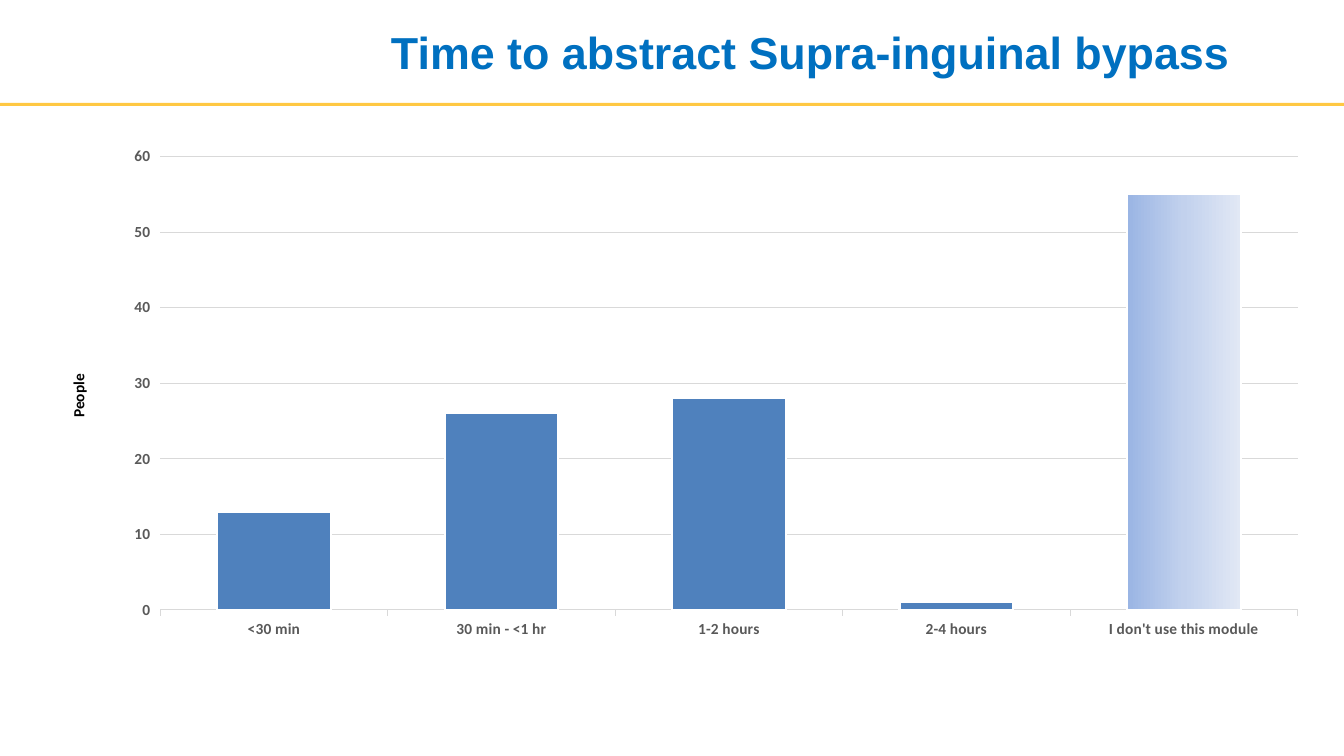
from copy import deepcopy
from dataclasses import dataclass

from pptx import Presentation
from pptx.chart.data import CategoryChartData
from pptx.dml.color import RGBColor
from pptx.enum.chart import XL_CHART_TYPE as ChartType, XL_TICK_MARK as Tick
from pptx.enum.shapes import MSO_SHAPE as Shape
from pptx.enum.text import MSO_ANCHOR as Anchor, PP_ALIGN as Align
from pptx.oxml import parse_xml
from pptx.oxml.ns import nsdecls
from pptx.util import Pt

PX = 9144
GREY, GRID, WHITE = "595959", "D9D9D9", "FFFFFF"
PEOPLE_BY_TIME = {
    "<30 min": 13,
    "30 min - <1 hr": 26,
    "1-2 hours": 28,
    "2-4 hours": 1,
    "I don't use this module": 55,
}
UNUSED_GRADIENT = [(0, "9AB5E4"), (0.5, "C2D1ED"), (1, "E1E8F5")]
PLOT_LAYOUT = {"x": 0.04, "y": 0.04, "w": 0.94, "h": 0.88}


@dataclass
class Label:
    """A line of bold text with its box in px."""
    text: str
    box: tuple[int, int, int, int]
    font: dict
    color: str
    anchor: Anchor = Anchor.TOP
    rotation: int = 0


LABELS = [
    Label("Time to abstract Supra-inguinal bypass", (378, 0, 867, 102),
          {"name": "Arial", "size": Pt(32), "bold": True}, "0070C0", Anchor.MIDDLE),
    Label("People", (-91, 241, 338, 29),
          {"name": "Calibri", "size": Pt(11), "bold": True}, "000000", rotation=270),
]


def rgb(color: str) -> RGBColor:
    """Turn a hex string into a colour."""
    return RGBColor.from_string(color)


def emu(box: tuple[int, ...]) -> list[int]:
    """Scale px lengths to EMU."""
    return [length * PX for length in box]


def style_font(font, values: dict, color: str) -> None:
    """Apply format values and a colour to a font."""
    for name, value in values.items():
        setattr(font, name, value)
    font.color.rgb = rgb(color)


def style_line(line, color: str, width: float) -> None:
    """Give a line a solid colour and a width in points."""
    line.color.rgb = rgb(color)
    line.width = Pt(width)


def add_rule(slide) -> None:
    """Draw the yellow band under the title."""
    s = slide.shapes.add_shape(Shape.RECTANGLE, *emu((0, 102, 1333, 3)))
    s.shadow.inherit = False
    s.fill.solid()
    s.fill.fore_color.rgb = rgb("FFC843")
    s.line.fill.background()


def add_label(slide, label: Label) -> None:
    """Draw one text box."""
    s = slide.shapes.add_textbox(*emu(label.box))
    s.rotation = label.rotation
    tf = s.text_frame
    tf.word_wrap = True
    tf.vertical_anchor = label.anchor
    p = tf.paragraphs[0]
    p.alignment = Align.LEFT
    r = p.add_run()
    r.text = label.text
    style_font(r.font, label.font, label.color)


def fill_gradient(fill, gradient: list[tuple[float, str]], chart) -> None:
    """Fill with a three-stop gradient running left to right."""
    fill.gradient()
    fill.gradient_angle = 0
    stops = chart.element.xpath(".//a:gsLst")[0]
    stops.insert(1, deepcopy(stops[0]))
    for stop, (position, color) in zip(fill.gradient_stops, gradient):
        stop.position = position
        stop.color.rgb = rgb(color)


def set_plot_layout(chart) -> None:
    """Fix the inner plot area as fractions of the chart."""
    modes = '<c:xMode val="edge"/><c:yMode val="edge"/>'
    sizes = "".join(f'<c:{k} val="{v}"/>' for k, v in PLOT_LAYOUT.items())
    layout = parse_xml(
        f'<c:layout {nsdecls("c")}><c:manualLayout><c:layoutTarget val="inner"/>'
        f"{modes}{sizes}</c:manualLayout></c:layout>")
    plot_area = chart.element.xpath(".//c:plotArea")[0]
    for old in plot_area.xpath("./c:layout"):
        plot_area.remove(old)
    plot_area.insert(0, layout)


def add_time_chart(slide) -> None:
    """Draw the column chart of people by abstraction time."""
    data = CategoryChartData()
    data.categories = list(PEOPLE_BY_TIME)
    data.add_series("Series 1", list(PEOPLE_BY_TIME.values()))
    chart = slide.shapes.add_chart(
        ChartType.COLUMN_CLUSTERED, *emu((111, 135, 1200, 511)), data).chart
    chart.has_legend = chart.has_title = False
    font = {"name": "Calibri", "size": Pt(11), "bold": True}
    style_font(chart.font, font, "000000")
    set_plot_layout(chart)

    for axis in (chart.category_axis, chart.value_axis):
        style_font(axis.tick_labels.font, font, GREY)
        axis.major_tick_mark = Tick.OUTSIDE
        axis.minor_tick_mark = Tick.NONE
    style_line(chart.category_axis.format.line, GRID, 0.75)
    values = chart.value_axis
    for name, value in {"minimum_scale": 0, "maximum_scale": 60, "major_unit": 10}.items():
        setattr(values, name, value)
    values.format.line.fill.background()
    style_line(values.major_gridlines.format.line, GRID, 0.75)

    plot = chart.plots[0]
    plot.gap_width = 100
    plot.vary_by_categories = False
    series = plot.series[0]
    series.format.fill.solid()
    series.format.fill.fore_color.rgb = rgb("4F81BD")
    unused = series.points[len(PEOPLE_BY_TIME) - 1]
    fill_gradient(unused.format.fill, UNUSED_GRADIENT, chart)
    for part in (series, unused):
        style_line(part.format.line, WHITE, 1.5)


def main() -> None:
    """Build and save the slide."""
    prs = Presentation()
    prs.slide_width, prs.slide_height = emu((1333, 750))
    slide = prs.slides.add_slide(prs.slide_layouts[6])
    add_rule(slide)
    add_time_chart(slide)
    for label in LABELS:
        add_label(slide, label)
    prs.save("out.pptx")


if __name__ == "__main__":
    main()
